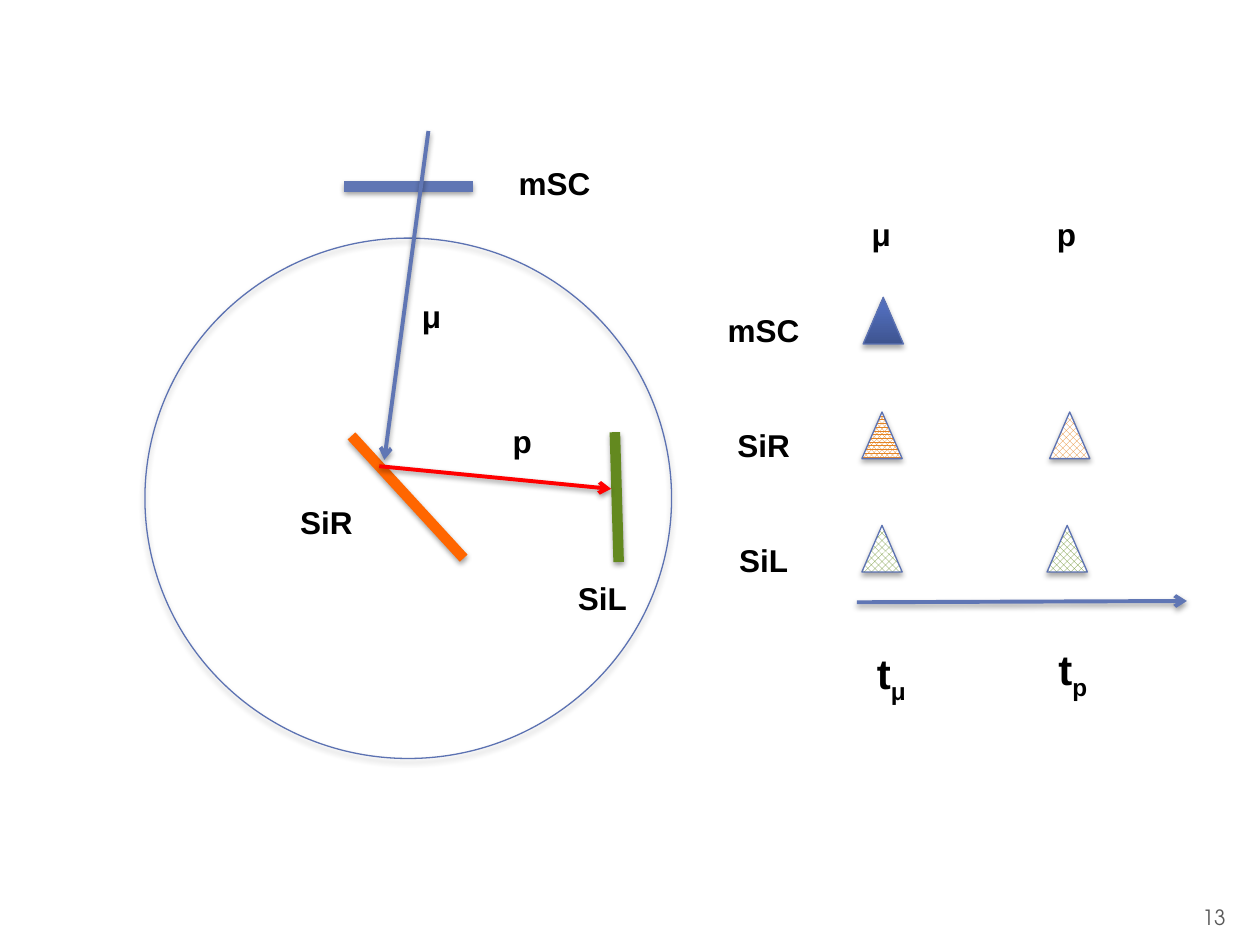
from dataclasses import dataclass

from lxml.etree import SubElement
from pptx import Presentation
from pptx.dml.color import RGBColor
from pptx.enum.dml import MSO_PATTERN
from pptx.enum.shapes import MSO_CONNECTOR, MSO_SHAPE
from pptx.enum.text import MSO_ANCHOR, PP_ALIGN
from pptx.oxml.ns import qn
from pptx.util import Pt

EMU_PER_PX = 9144  # 100 px to the inch


@dataclass(frozen=True)
class Theme:
    black: str = "000000"
    blue: str = "6076B4"
    outline: str = "5C72B2"
    orange: str = "FF6600"
    green: str = "63891F"
    red: str = "FF0000"
    pattern_orange: str = "E68422"
    white: str = "FFFFFF"
    gradient_dark: str = "3E5490"
    gradient_light: str = "516DBB"
    grey: str = "595959"
    font: str = "Arial"
    number_font: str = "TeX Gyre Adventor"
    label_size: int = 18
    time_size: int = 24
    number_size: int = 12
    thin: float = 0.75
    arrow: float = 2.25
    plate: float = 6


THEME = Theme()


@dataclass(frozen=True)
class Label:
    text: str
    left: int
    top: int
    width: int
    height: int = 40
    subscript: str = ""
    size: int = THEME.label_size


@dataclass(frozen=True)
class Line:
    start: tuple[int, int]
    end: tuple[int, int]
    color: str
    width: float = THEME.plate
    arrow: bool = False


@dataclass(frozen=True)
class Signal:
    left: int
    top: int
    color: str = ""
    pattern: MSO_PATTERN | None = None


def px(length: int) -> int:
    return length * EMU_PER_PX


def rgb(color: str) -> RGBColor:
    return RGBColor.from_string(color)


def add_shadow(shape, distance: int, opacity: int) -> None:
    """Drop a soft black shadow straight down."""
    effects = SubElement(shape._element.spPr, qn("a:effectLst"))
    shadow = SubElement(effects, qn("a:outerShdw"), blurRad="40000", dist=str(distance),
                        dir="5400000", rotWithShape="0")
    color = SubElement(shadow, qn("a:srgbClr"), val=THEME.black)
    SubElement(color, qn("a:alpha"), val=str(opacity * 1000))


def add_span(para, text: str, size: int, color: str = THEME.black,
             font: str = THEME.font, bold: bool = True):
    span = para.add_run()
    span.text = text
    span.font.name, span.font.size, span.font.bold = font, Pt(size), bold
    span.font.color.rgb = rgb(color)
    return span


def add_frame(page, left: int, top: int, width: int, height: int):
    frame = page.shapes.add_textbox(px(left), px(top), px(width), px(height)).text_frame
    frame.word_wrap = True
    frame.paragraphs[0].alignment = PP_ALIGN.CENTER
    return frame


def add_label(page, label: Label) -> None:
    frame = add_frame(page, label.left, label.top, label.width, label.height)
    para = frame.paragraphs[0]
    add_span(para, label.text, label.size)
    if label.subscript:
        span = add_span(para, label.subscript, label.size)
        span.font._element.set("baseline", "-25000")


def add_row_names(page, names: list[str]) -> None:
    frame = add_frame(page, 567, 242, 78, 222)
    frame.word_wrap = False
    for index, name in enumerate(names):
        para = frame.add_paragraph() if index else frame.paragraphs[0]
        para.alignment = PP_ALIGN.CENTER
        para.space_before = Pt(44 if index else 0)
        add_span(para, name, THEME.label_size)


def add_line(page, line: Line) -> None:
    connector = page.shapes.add_connector(
        MSO_CONNECTOR.STRAIGHT, *map(px, line.start + line.end))
    connector.line.color.rgb = rgb(line.color)
    connector.line.width = Pt(line.width)
    if line.arrow:
        SubElement(connector.line._get_or_add_ln(), qn("a:tailEnd"), type="arrow")
    add_shadow(connector, 20000, 38)


def add_outlined(page, kind: MSO_SHAPE, left: int, top: int, width: int, height: int):
    shape = page.shapes.add_shape(kind, px(left), px(top), px(width), px(height))
    shape.fill.background()
    shape.line.color.rgb = rgb(THEME.outline)
    shape.line.width = Pt(THEME.thin)
    add_shadow(shape, 23000, 35)
    return shape


def add_signal(page, signal: Signal) -> None:
    fill = add_outlined(page, MSO_SHAPE.ISOSCELES_TRIANGLE,
                        signal.left, signal.top, 32, 37).fill
    if signal.pattern is not None:
        fill.patterned()
        fill.pattern = signal.pattern
        fill.fore_color.rgb = rgb(signal.color)
        fill.back_color.rgb = rgb(THEME.white)
        return
    fill.gradient()
    fill.gradient_angle = 90
    dark, light = fill.gradient_stops
    dark.color.rgb, dark.position = rgb(THEME.gradient_dark), 0
    light.color.rgb, light.position = rgb(THEME.gradient_light), 0.8


def add_page_number(page, number: str) -> None:
    frame = add_frame(page, 934, 708, 61, 40)
    frame.vertical_anchor = MSO_ANCHOR.MIDDLE
    frame.margin_left, frame.margin_right = px(3), px(5)
    add_span(frame.paragraphs[0], number, THEME.number_size, THEME.grey,
             THEME.number_font, bold=False)


PLATES = [
    Line((368, 443), (279, 346), THEME.orange),
    Line((375, 148), (273, 148), THEME.blue),
    Line((491, 446), (488, 343), THEME.green),
]
ARROWS = [
    Line((340, 104), (305, 365), THEME.blue, THEME.arrow, True),
    Line((301, 370), (485, 388), THEME.red, THEME.arrow, True),
    Line((680, 478), (942, 477), THEME.blue, THEME.arrow, True),
]
CHECKER = MSO_PATTERN.LARGE_CHECKER_BOARD
SIGNALS = [
    Signal(685, 236),
    Signal(684, 327, THEME.pattern_orange, MSO_PATTERN.PERCENT_80),
    Signal(833, 327, THEME.pattern_orange, CHECKER),
    Signal(684, 417, THEME.green, CHECKER),
    Signal(831, 417, THEME.green, CHECKER),
]
LABELS = [
    Label("mSC", 389, 125, 102),
    Label("SiL", 427, 455, 102),
    Label("SiR", 208, 394, 102),
    Label("μ", 299, 231, 87),
    Label("p", 371, 330, 87),
    Label("μ", 656, 166, 87),
    Label("p", 803, 166, 87),
    Label("t", 666, 509, 83, 50, "μ", THEME.time_size),
    Label("t", 810, 506, 83, 50, "p", THEME.time_size),
]


def main() -> None:
    deck = Presentation()
    deck.slide_width, deck.slide_height = px(1000), px(750)
    page = deck.slides.add_slide(deck.slide_layouts[6])
    add_page_number(page, "13")

    # Chamber and detector plates
    add_outlined(page, MSO_SHAPE.OVAL, 115, 189, 418, 413)
    for plate in PLATES:
        add_line(page, plate)

    # Signals by detector and time
    add_row_names(page, ["mSC", "SiR", "SiL"])
    for signal in SIGNALS:
        add_signal(page, signal)

    # Particle tracks, time axis and labels
    for arrow in ARROWS:
        add_line(page, arrow)
    for label in LABELS:
        add_label(page, label)
    deck.save("out.pptx")


if __name__ == "__main__":
    main()
